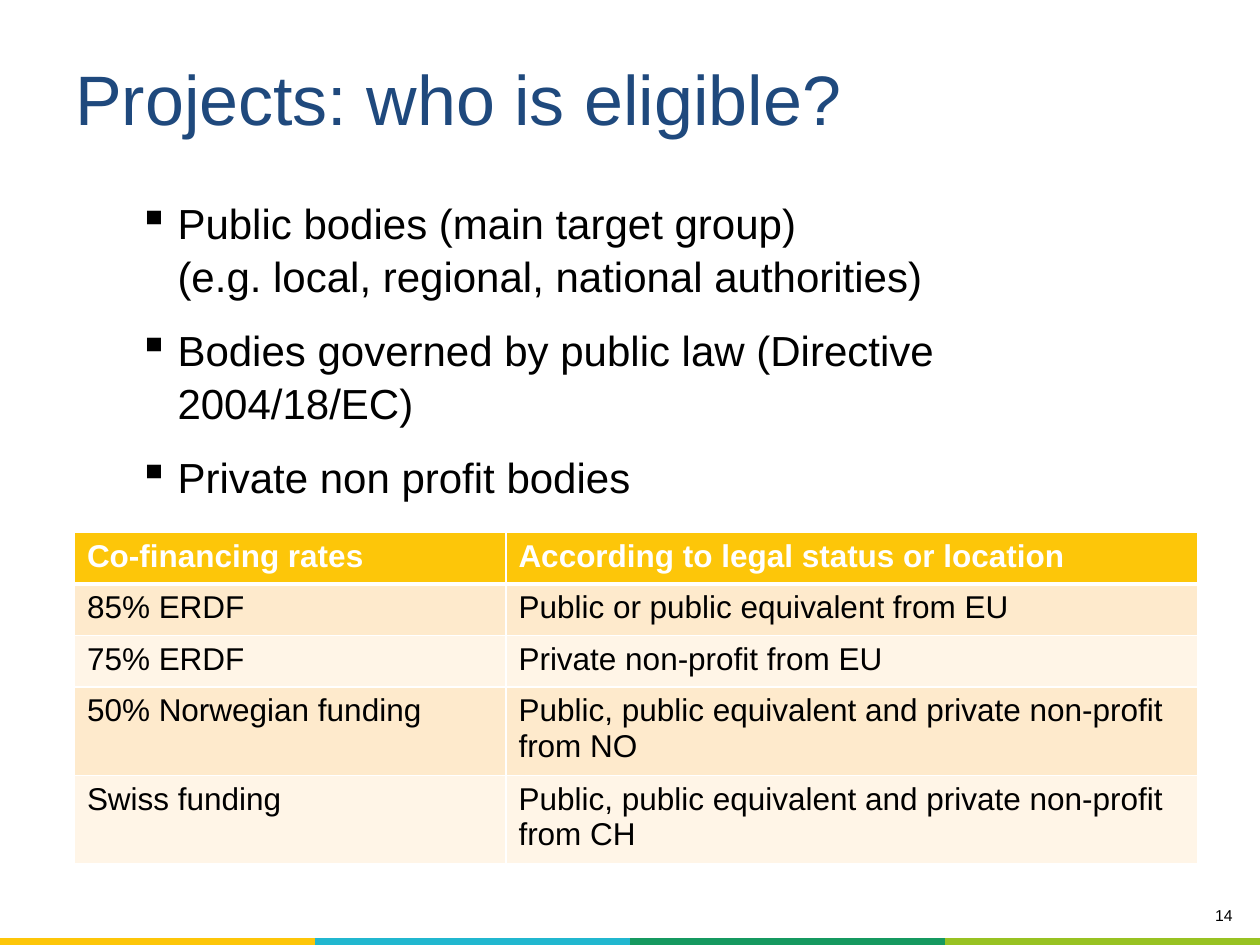
"""Build the slide on who is eligible for projects and at which rates."""
from dataclasses import dataclass

from lxml import etree
from pptx import Presentation
from pptx import util as u
from pptx.dml.color import RGBColor
from pptx.enum import text
from pptx.oxml import ns

BLACK = RGBColor(0x00, 0x00, 0x00)
WHITE = RGBColor(0xFF, 0xFF, 0xFF)
NAVY = RGBColor(0x1F, 0x49, 0x7D)
GOLD = RGBColor(0xFD, 0xC6, 0x09)
CYAN = RGBColor(0x21, 0xB7, 0xCF)
GREEN = RGBColor(0x15, 0x99, 0x60)
LIME = RGBColor(0x98, 0xC2, 0x22)
SAND = RGBColor(0xFE, 0xEA, 0xCC)
CREAM = RGBColor(0xFF, 0xF5, 0xE7)
FACE = "Arial"


@dataclass(frozen=True)
class Box:
    left: float
    top: float
    width: float
    height: float

    def place(self) -> list[u.Length]:
        return [u.Cm(n) for n in (self.left, self.top, self.width, self.height)]


@dataclass(frozen=True)
class Style:
    size: float
    color: RGBColor
    bold: bool = False


@dataclass(frozen=True)
class Row:
    rate: str
    status: str
    fill: RGBColor
    style: Style = Style(18, BLACK)
    above: float = 1
    below: float = 1


ROWS = [
    Row("Co-financing rates", "According to legal status or location",
        GOLD, Style(18, WHITE, True), below=3),
    Row("85% ERDF", "Public or public equivalent from EU", SAND, above=3),
    Row("75% ERDF", "Private non-profit from EU", CREAM),
    Row("50% Norwegian funding",
        "Public, public equivalent and private non-profit from NO", SAND),
    Row("Swiss funding",
        "Public, public equivalent and private non-profit from CH", CREAM),
]
BODIES = [
    ["Public bodies (main target group)",
     "(e.g. local, regional, national authorities)"],
    ["Bodies governed by public law (Directive 2004/18/EC)"],
    ["Private non profit bodies"],
]


def write(para, words: str, style: Style) -> None:
    run = para.add_run()
    run.text = words
    run.font.name = FACE
    run.font.size = u.Pt(style.size)
    run.font.bold = style.bold
    run.font.color.rgb = style.color


def add_box(slide, box: Box, anchor=text.MSO_ANCHOR.TOP):
    frame = slide.shapes.add_textbox(*box.place()).text_frame
    frame.word_wrap = True
    frame.vertical_anchor = anchor
    return frame


def add_list(frame, items: list[list[str]], style: Style) -> None:
    for rank, lines in enumerate(items):
        para = frame.add_paragraph() if rank else frame.paragraphs[0]
        props = para._p.get_or_add_pPr()
        props.set("marL", str(u.Cm(2.06)))
        props.set("indent", str(u.Cm(-0.79)))
        etree.SubElement(props, ns.qn("a:buChar"), char="▪")
        para.line_spacing = 1.05
        para.space_before = u.Pt(12 if rank else 0)
        for count, line in enumerate(lines):
            if count:
                para.add_line_break()
            write(para, line, style)


def set_edge(cell, above: float, below: float, side: float) -> None:
    props = cell._tc.get_or_add_tcPr()
    widths = {"lnL": side, "lnR": side, "lnT": above, "lnB": below}
    for place, (tag, width) in enumerate(widths.items()):
        line = etree.Element(ns.qn(f"a:{tag}"), w=str(u.Pt(width)))
        if width:
            fill = etree.SubElement(line, ns.qn("a:solidFill"))
            etree.SubElement(fill, ns.qn("a:srgbClr"), val=str(WHITE))
        else:
            etree.SubElement(line, ns.qn("a:noFill"))
        props.insert(place, line)


def paint(cell, color: RGBColor) -> None:
    cell.fill.solid()
    cell.fill.fore_color.rgb = color


def add_grid(slide, box: Box, count: int, widths: list[float]):
    grid = slide.shapes.add_table(count, len(widths), *box.place()).table
    grid.first_row = grid.horz_banding = False
    for column, width in zip(grid.columns, widths):
        column.width = u.Cm(width)
    return grid


def add_band(slide) -> None:
    hues = [GOLD, CYAN, GREEN, LIME]
    grid = add_grid(slide, Box(0, 18.9, 25.4, 0.15), 1, [6.35] * len(hues))
    for cell, hue in zip(grid.iter_cells(), hues):
        paint(cell, hue)
        set_edge(cell, 0, 0, 0)


def add_rates(slide) -> None:
    grid = add_grid(slide, Box(1.5, 10.73, 22.65, 5.2), len(ROWS), [8.7, 13.95])
    for line, row in zip(grid.rows, ROWS):
        line.height = u.Cm(1.04)
        for cell, words in zip(line.cells, (row.rate, row.status)):
            paint(cell, row.fill)
            set_edge(cell, row.above, row.below, 1)
            write(cell.text_frame.paragraphs[0], words, row.style)


def main() -> None:
    deck = Presentation()
    deck.slide_width, deck.slide_height = u.Cm(25.4), u.Cm(19.05)
    slide = deck.slides.add_slide(deck.slide_layouts[6])
    add_band(slide)
    page = add_box(slide, Box(20.1, 18.14, 5, 0.78)).paragraphs[0]
    page.alignment = text.PP_ALIGN.RIGHT
    write(page, "14", Style(9, BLACK))
    title = add_box(slide, Box(1.27, 1.2, 22.86, 1.55), text.MSO_ANCHOR.MIDDLE)
    write(title.paragraphs[0], "Projects: who is eligible?", Style(40, NAVY))
    add_list(add_box(slide, Box(1.27, 3.81, 22.7, 14.4)), BODIES, Style(24, BLACK))
    add_rates(slide)
    deck.save("out.pptx")


if __name__ == "__main__":
    main()
